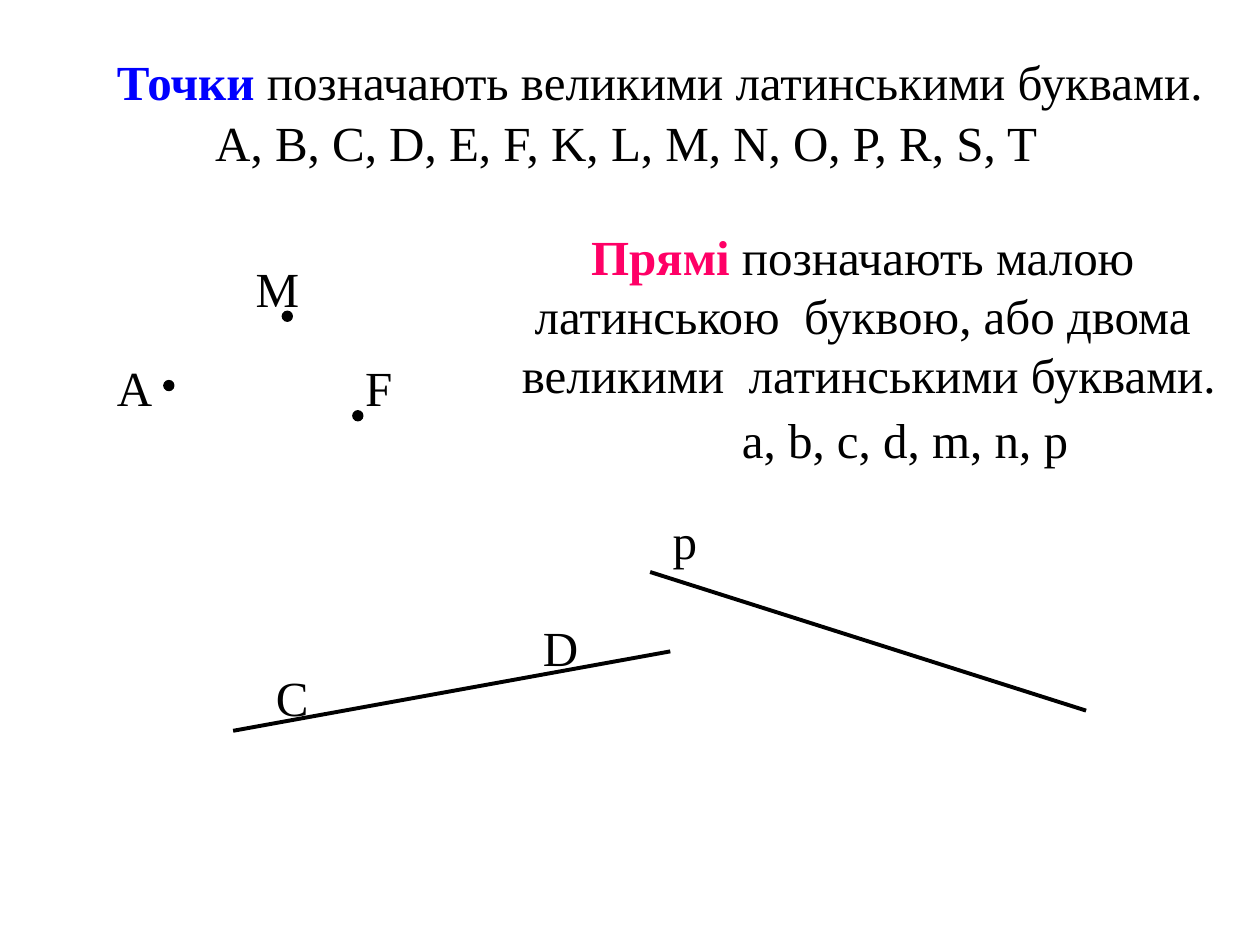
from dataclasses import dataclass

from lxml.etree import SubElement
from pptx import Presentation
from pptx.dml.color import RGBColor
from pptx.enum.shapes import MSO_CONNECTOR, MSO_SHAPE
from pptx.enum.text import MSO_AUTO_SIZE, PP_ALIGN
from pptx.oxml.ns import qn
from pptx.util import Inches, Pt


@dataclass(frozen=True)
class Theme:
    """Colours, font and sizes of the slide."""
    ink: RGBColor = RGBColor(0, 0, 0)
    points_term: RGBColor = RGBColor(0, 0, 255)
    lines_term: RGBColor = RGBColor(255, 0, 102)
    font: str = "Times New Roman"
    text_size: Pt = Pt(28)
    line_width: Pt = Pt(2.25)
    outline_width: Pt = Pt(0.75)
    dot_size: float = 0.08
    row_height: float = 0.57


THEME = Theme()


def add_run(paragraph, text, color=THEME.ink, bold=False):
    """Append a formatted run to a paragraph."""
    run = paragraph.add_run()
    run.text = text
    run.font.name = THEME.font
    run.font.size = THEME.text_size
    run.font.bold = bold
    run.font.color.rgb = color


def add_text(slide, left, top, width, lines, height=THEME.row_height,
             term=None, term_color=None, alignment=PP_ALIGN.LEFT, wrap=False):
    """Add lines of text, the first one led by an optional bold term."""
    box = slide.shapes.add_textbox(Inches(left), Inches(top), Inches(width), Inches(height))
    frame = box.text_frame
    frame.word_wrap = wrap
    frame.auto_size = MSO_AUTO_SIZE.SHAPE_TO_FIT_TEXT
    for index, line in enumerate(lines):
        paragraph = frame.add_paragraph() if index else frame.paragraphs[0]
        paragraph.alignment = alignment
        if term and index == 0:
            add_run(paragraph, term, term_color, bold=True)
        add_run(paragraph, line)


def add_dot(slide, left, top):
    """Add a small round point."""
    size = Inches(THEME.dot_size)
    dot = slide.shapes.add_shape(MSO_SHAPE.OVAL, Inches(left), Inches(top), size, size)
    dot.shadow.inherit = False
    dot.fill.solid()
    dot.fill.fore_color.rgb = THEME.ink
    dot.line.color.rgb = THEME.ink
    dot.line.width = THEME.outline_width


def add_line(slide, *ends):
    """Add a straight line between two ends."""
    line = slide.shapes.add_connector(MSO_CONNECTOR.STRAIGHT, *map(Inches, ends))
    line.line.color.rgb = THEME.ink
    line.line.width = THEME.line_width
    SubElement(line.element.spPr, qn("a:effectLst"))


def main():
    """Build and save the slide on naming points and lines."""
    presentation = Presentation()
    presentation.slide_width = Inches(10)
    presentation.slide_height = Inches(7.5)
    slide = presentation.slides.add_slide(presentation.slide_layouts[6])

    add_text(slide, 0.83, 0.36, 8.91, [" позначають великими латинськими буквами."],
             term="Точки", term_color=THEME.points_term)
    add_text(slide, 1.61, 0.84, 6.82, ["A, B, C, D, E, F, K, L, M, N, O, P, R, S, T"])
    add_text(slide, 4.01, 1.75, 5.77,
             ["позначають малою ", "латинською  буквою, або двома ",
              "великими  латинськими буквами."],
             height=1.51, term="Прямі ", term_color=THEME.lines_term,
             alignment=PP_ALIGN.CENTER)
    add_text(slide, 5.79, 3.2, 3.23, ["a, b, c, d, m, n, p"], wrap=True)

    for left, top in [(1.3, 3.02), (2.8, 3.26), (2.24, 2.47)]:
        add_dot(slide, left, top)
    for ends in [(5.16, 4.54, 8.62, 5.64), (1.85, 5.8, 5.32, 5.17)]:
        add_line(slide, *ends)
    for name, left, top, width in [
        ("А", 0.83, 2.79, 0.46),
        ("М", 1.93, 2, 0.53),
        ("F", 2.8, 2.79, 0.42),
        ("p", 5.24, 4, 0.39),
        ("D", 4.21, 4.85, 0.48),
        ("С", 2.09, 5.25, 0.48),
    ]:
        add_text(slide, left, top, width, [name])

    presentation.save("out.pptx")


if __name__ == "__main__":
    main()
